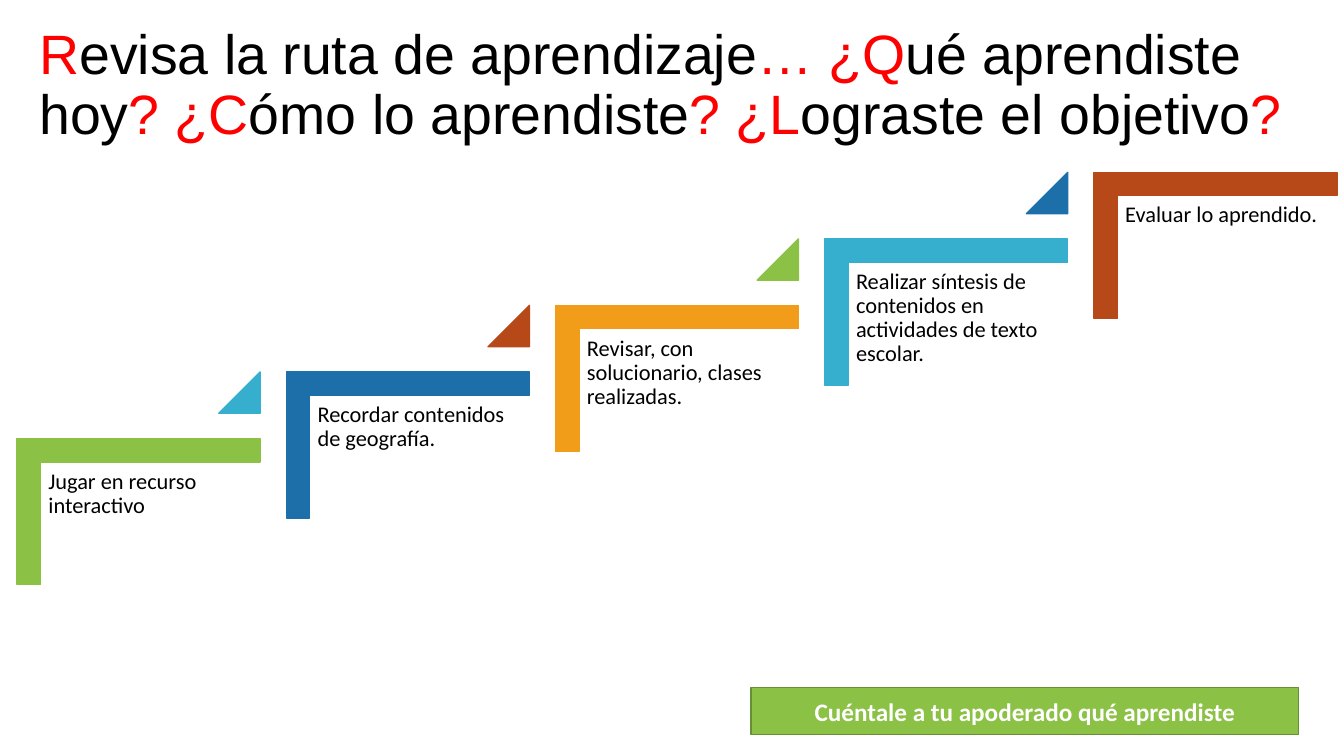
import pptx
import pptx.dml.color
import pptx.enum.shapes
import pptx.enum.text
import pptx.util

RGBColor = pptx.dml.color.RGBColor
Inches = pptx.util.Inches
Shapes = pptx.enum.shapes.MSO_SHAPE
Align = pptx.enum.text.PP_ALIGN
Anchor = pptx.enum.text.MSO_ANCHOR

RED = RGBColor(0xFF, 0x00, 0x00)
BLACK = RGBColor(0x00, 0x00, 0x00)
WHITE = RGBColor(0xFF, 0xFF, 0xFF)
GREEN = RGBColor(0x8B, 0xC1, 0x45)
DARK_GREEN = RGBColor(0x67, 0x8F, 0x33)
BLUE = RGBColor(0x1D, 0x6F, 0xA9)
ORANGE = RGBColor(0xF1, 0x9D, 0x19)
CYAN = RGBColor(0x36, 0xAF, 0xCE)
RUST = RGBColor(0xB7, 0x49, 0x19)

SLIDE_WIDTH, SLIDE_HEIGHT = 13.33, 7.5
STEP_WIDTH, STEP_HEIGHT = 2.41, 1.45
STEP_RUN, STEP_RISE = 2.67, 0.66
TRIANGLE_SIDE = 0.41
TEXT_OFFSET = 0.24

TITLE_PARTS = [
    "R", "evisa la ruta de aprendizaje", "… ¿Q", "ué aprendiste hoy", "? ¿C",
    "ómo lo aprendiste", "? ¿L", "ograste el objetivo", "?",
]
STEPS = [
    ("Jugar en recurso interactivo", GREEN, CYAN),
    ("Recordar contenidos de geografía.", BLUE, RUST),
    ("Revisar, con solucionario, clases realizadas.", ORANGE, GREEN),
    ("Realizar síntesis de contenidos en actividades de texto escolar.", CYAN, BLUE),
    ("Evaluar lo aprendido.", RUST, None),
]


def set_format(target, values):
    """Set every attribute named in values on the target."""
    for name, value in values.items():
        setattr(target, name, value)


def write_run(paragraph, text, font_name, size, color, bold=False):
    """Append one formatted run to the paragraph."""
    run = paragraph.add_run()
    run.text = text
    set_format(run.font, {"name": font_name, "size": pptx.util.Pt(size), "bold": bold})
    run.font.color.rgb = color


def add_filled_shape(slide, kind, box, fill, line):
    """Add a flat preset shape in the box."""
    shape = slide.shapes.add_shape(kind, *map(Inches, box))
    shape.shadow.inherit = False
    shape.fill.solid()
    shape.fill.fore_color.rgb = fill
    shape.line.color.rgb = line
    shape.line.width = pptx.util.Pt(1)
    return shape


def add_title(slide, box):
    """Fill the title placeholder with alternating red and black runs."""
    title = slide.shapes.title
    set_format(title, dict(zip(("left", "top", "width", "height"), map(Inches, box))))
    set_format(title.text_frame, {
        "word_wrap": True, "vertical_anchor": Anchor.MIDDLE,
        "auto_size": pptx.enum.text.MSO_AUTO_SIZE.NONE,
    })
    paragraph = title.text_frame.paragraphs[0]
    set_format(paragraph, {"alignment": Align.LEFT, "line_spacing": 0.9})
    for index, text in enumerate(TITLE_PARTS):
        write_run(paragraph, text, "Arial", 39.6, BLACK if index % 2 else RED)


def add_step(slide, left, top, text, color, triangle_color):
    """Draw one stair with its text and the triangle leading upwards."""
    corner_box = (left + (STEP_WIDTH - STEP_HEIGHT) / 2,
                  top - (STEP_WIDTH - STEP_HEIGHT) / 2, STEP_HEIGHT, STEP_WIDTH)
    corner = add_filled_shape(slide, Shapes.CORNER, corner_box, color, color)
    corner.rotation = 90
    for index in range(2):
        corner.adjustments[index] = 0.16

    text_box = (left + TEXT_OFFSET, top + TEXT_OFFSET, 2.18, 1.91)
    label = slide.shapes.add_textbox(*map(Inches, text_box))
    margins = ("margin_left", "margin_top", "margin_right", "margin_bottom")
    set_format(label.text_frame, {"word_wrap": True, **dict.fromkeys(margins, Inches(0.07))})
    paragraph = label.text_frame.paragraphs[0]
    set_format(paragraph, {"alignment": Align.LEFT, "line_spacing": 0.9})
    write_run(paragraph, text, "Calibri", 16, BLACK)

    if triangle_color is not None:
        triangle_box = (left + STEP_WIDTH - TRIANGLE_SIDE, top - STEP_RISE,
                        TRIANGLE_SIDE, TRIANGLE_SIDE)
        triangle = add_filled_shape(slide, Shapes.ISOSCELES_TRIANGLE, triangle_box,
                                    triangle_color, triangle_color)
        triangle.adjustments[0] = 1


def add_staircase(slide, left, top):
    """Place the learning steps rising from the lowest one at left, top."""
    for index, step in enumerate(STEPS):
        add_step(slide, left + index * STEP_RUN, top - index * STEP_RISE, *step)


def add_banner(slide, box):
    """Add the closing invitation."""
    banner = add_filled_shape(slide, Shapes.RECTANGLE, box, GREEN, DARK_GREEN)
    set_format(banner.text_frame, {"word_wrap": True, "vertical_anchor": Anchor.MIDDLE})
    paragraph = banner.text_frame.paragraphs[0]
    paragraph.alignment = Align.CENTER
    write_run(paragraph, "Cuéntale a tu apoderado qué aprendiste", "Calibri", 18, WHITE, True)


def main():
    """Build and save the slide."""
    presentation = pptx.Presentation()
    set_format(presentation, {"slide_width": Inches(SLIDE_WIDTH),
                              "slide_height": Inches(SLIDE_HEIGHT)})
    slide = presentation.slides.add_slide(presentation.slide_layouts[5])
    add_title(slide, (0.29, 0.13, 12.76, 1.45))
    add_banner(slide, (7.45, 6.82, 5.43, 0.47))
    add_staircase(slide, 0.17, 4.35)
    presentation.save("out.pptx")


if __name__ == "__main__":
    main()
